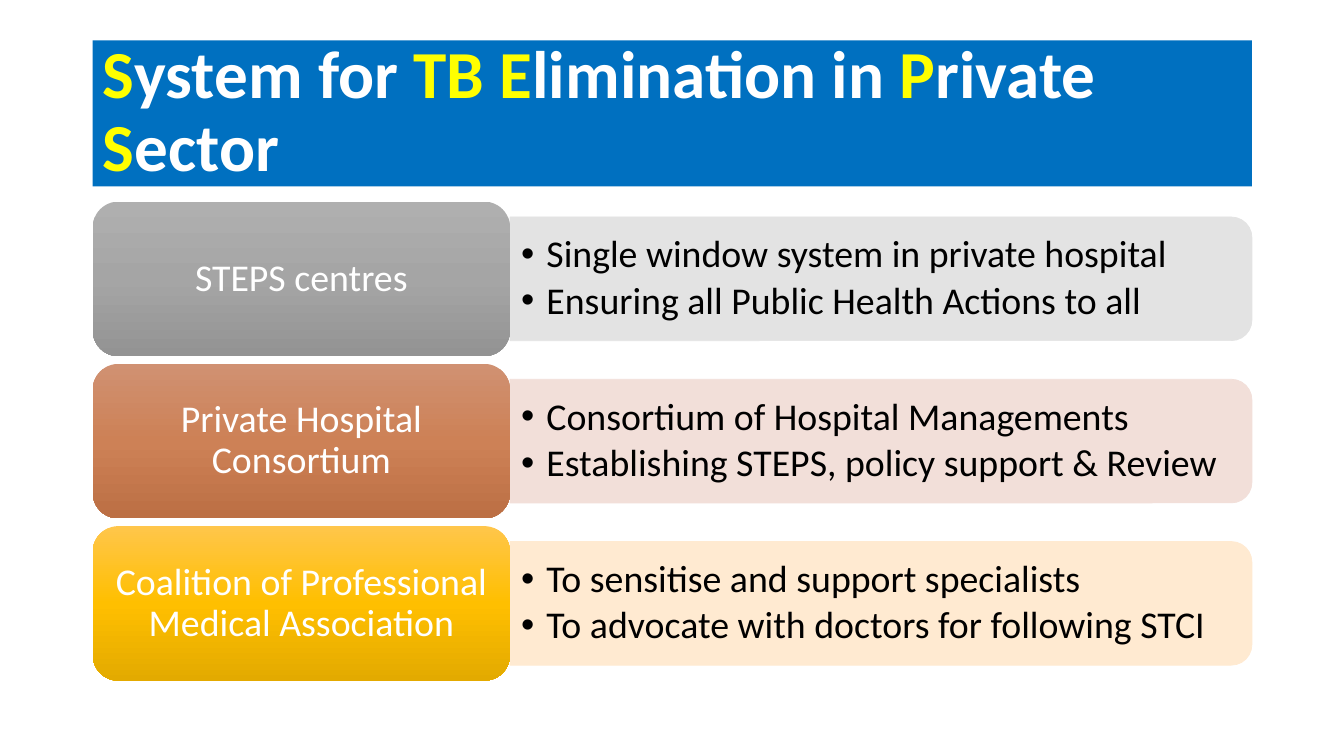
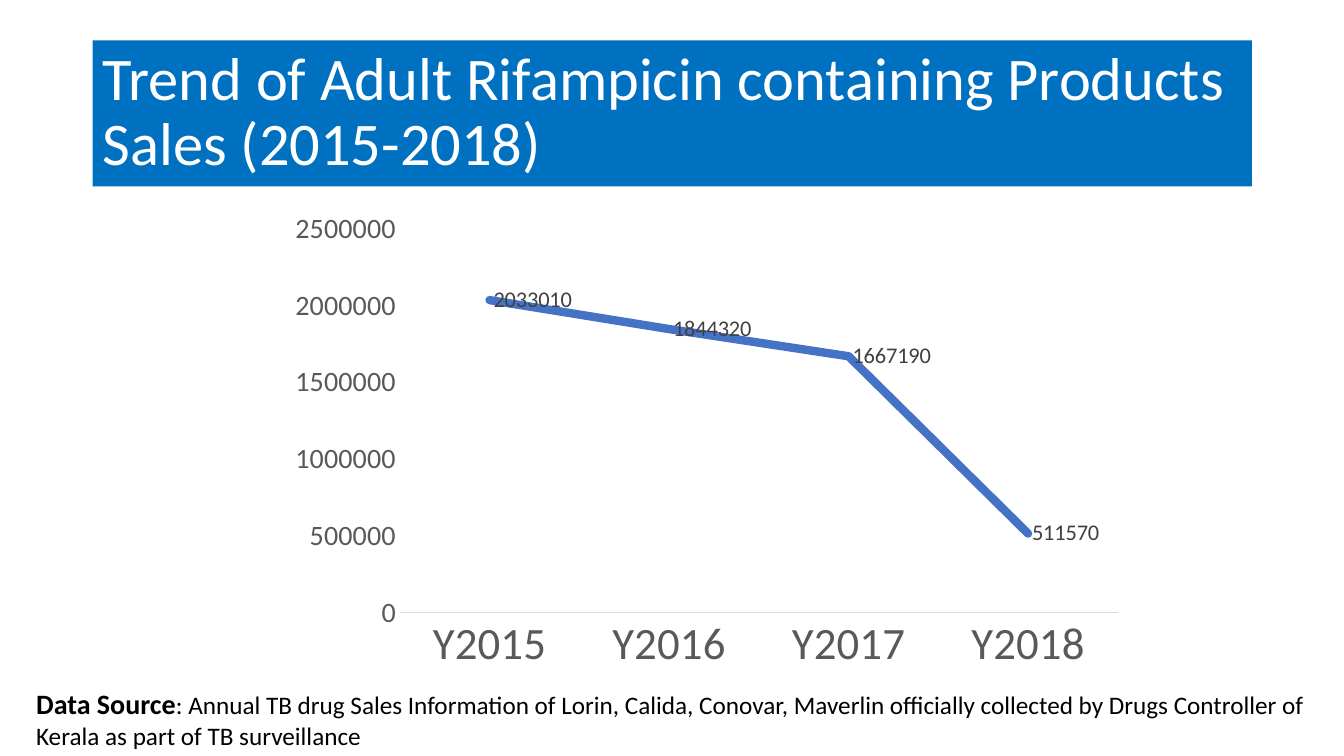
from copy import deepcopy
from pptx import Presentation
from pptx.chart.data import CategoryChartData
from pptx.dml.color import RGBColor
from pptx.enum.chart import XL_CHART_TYPE as ChartType
from pptx.enum.chart import XL_LABEL_POSITION as LabelSpot
from pptx.enum.chart import XL_MARKER_STYLE as Marker
from pptx.enum.chart import XL_TICK_MARK as Tick
from pptx.enum.shapes import MSO_SHAPE as Shape
from pptx.enum.text import MSO_ANCHOR as Anchor
from pptx.enum.text import MSO_AUTO_SIZE as AutoSize
from pptx.enum.text import PP_ALIGN as Align
from pptx.oxml.ns import qn
from pptx.oxml.xmlchemy import OxmlElement
from pptx.util import Pt

FONT = "Calibri"
BLUE, YELLOW, WHITE, BLACK = "0070C0", "FFFF00", "FFFFFF", "000000"
AXIS_GREY, LABEL_GREY, RULE_GREY, SERIES_BLUE = "595959", "404040", "D9D9D9", "4472C4"
COMPARISON, TITLE_ONLY = 4, 5

TITLE_BOX = (66.24, 28.8, 828, 104.4)
ROWS_BOX = (66.24, 144, 828, 342.2)
CHART_BOX = (198.72, 144, 612, 342.72)
SOURCE_BOX = (18.72, 486.72, 927.36, 53.28)

ROWS = [
    ("STEPS centres",
     ["Single window system in private hospital", "Ensuring all Public Health Actions to all"],
     ["AFAFAF", "A5A5A5", "939393"], "E3E3E3"),
    ("Private Hospital Consortium",
     ["Consortium of Hospital Managements", "Establishing STEPS, policy support & Review"],
     ["D09172", "CD8156", "BC6F44"], "F2DFD9"),
    ("Coalition of Professional Medical Association",
     ["To sensitise and support specialists", "To advocate with doctors for following STCI"],
     ["FFC64B", "FFBF00", "E3AA00"], "FFEAD1"),
]
SALES = {"Y2015": 2033010, "Y2016": 1844320, "Y2017": 1667190, "Y2018": 511570}


def rgb(value):
    """Turn a hex string into a colour."""
    return RGBColor.from_string(value)


def apply(target, formats):
    """Set each attribute of the target from a dict."""
    for name, value in formats.items():
        setattr(target, name, value)


def place(item, box):
    """Move and size an item to a box given in points."""
    apply(item, dict(zip(("left", "top", "width", "height"), map(Pt, box))))


def style_font(font, size, color, bold=False):
    """Give a font its face, size, colour and weight."""
    apply(font, {"name": FONT, "size": Pt(size), "bold": bold})
    font.color.rgb = rgb(color)


def write(para, spans, **formats):
    """Fill a paragraph with (text, size, colour, bold) spans."""
    apply(para, formats)
    for text, *style in spans:
        span = para.add_run()
        span.text = text
        style_font(span.font, *style)


def set_frame(frame, side=7.2, edge=3.6, anchor=Anchor.MIDDLE):
    """Set wrapping, anchor and insets of a text frame."""
    apply(frame, {"word_wrap": True, "auto_size": AutoSize.NONE, "vertical_anchor": anchor,
                  "margin_left": Pt(side), "margin_right": Pt(side),
                  "margin_top": Pt(edge), "margin_bottom": Pt(edge)})


def add_title(page, spans):
    """Fill the title placeholder as a blue band."""
    title = page.shapes.title
    place(title, TITLE_BOX)
    title.fill.solid()
    title.fill.fore_color.rgb = rgb(BLUE)
    set_frame(title.text_frame)
    write(title.text_frame.paragraphs[0], spans, alignment=Align.LEFT, line_spacing=0.9)


def add_bullet(para):
    """Give a paragraph a hanging bullet."""
    props = para._p.get_or_add_pPr()
    props.set("marL", str(Pt(18)))
    props.set("indent", str(-Pt(18)))
    bullet = OxmlElement("a:buChar")
    bullet.set("char", "•")
    props.append(bullet)


def fill_gradient(shape, colors):
    """Fill a shape from top to bottom with evenly spaced colours."""
    shape.fill.gradient()
    shape.fill.gradient_angle = 270
    stop_list = shape._element.spPr.find(qn("a:gradFill")).find(qn("a:gsLst"))
    while len(stop_list) < len(colors):
        stop_list.append(deepcopy(stop_list[0]))
    for index, (stop, color) in enumerate(zip(shape.fill.gradient_stops, colors)):
        stop.position = index / (len(colors) - 1)
        stop.color.rgb = rgb(color)


def add_row(page, box, holder, label, points, gradient, tint):
    """Draw a label block with a tinted list panel on its right."""
    left, top, width, height = box
    label_width, panel_height = width * 0.36, height * 0.8
    panel_left, panel_width = left + label_width, width - label_width
    panel_top = top + (height - panel_height) / 2

    panel = page.shapes.add_shape(Shape.ROUND_2_SAME_RECTANGLE, 0, 0, 0, 0)
    place(panel, (panel_left + (panel_width - panel_height) / 2,
                  top + (height - panel_width) / 2, panel_height, panel_width))
    panel.rotation = 90
    panel.shadow.inherit = False
    panel.fill.solid()
    panel.fill.fore_color.rgb = panel.line.color.rgb = rgb(tint)
    panel.line.width = Pt(0.5)

    panel._element.addnext(holder._element)
    place(holder, (panel_left, panel_top, panel_width - 4, panel_height))
    frame = holder.text_frame
    set_frame(frame, 8, 4)
    for index, point in enumerate(points):
        para = frame.add_paragraph() if index else frame.paragraphs[0]
        write(para, [(point, 27, BLACK)], alignment=Align.LEFT, line_spacing=0.9,
              space_before=Pt(0), space_after=Pt(4))
        add_bullet(para)

    block = page.shapes.add_shape(Shape.ROUNDED_RECTANGLE, 0, 0, 0, 0)
    place(block, (left, top, label_width, height))
    block.shadow.inherit = False
    block.line.fill.background()
    fill_gradient(block, gradient)
    set_frame(block.text_frame, 8, 4)
    write(block.text_frame.paragraphs[0], [(label, 27, WHITE)],
          alignment=Align.CENTER, line_spacing=0.9)


def add_rows(page, box, rows, gap=5.5):
    """Stack the rows in a box, one body placeholder each."""
    left, top, width, height = box
    row_height = (height - gap * (len(rows) - 1)) / len(rows)
    holders = [item for item in page.placeholders if item.placeholder_format.idx > 0]
    for index, (holder, row) in enumerate(zip(holders, rows)):
        row_top = top + index * (row_height + gap)
        add_row(page, (left, row_top, width, row_height), holder, *row)
    for spare in holders[len(rows):]:
        spare._element.getparent().remove(spare._element)


def add_sales_chart(page, box, sales):
    """Draw the sales line chart in a box."""
    data = CategoryChartData()
    data.categories = list(sales)
    data.add_series("Series 1", list(sales.values()))
    chart = page.shapes.add_chart(ChartType.LINE, *map(Pt, box), data).chart
    apply(chart, {"has_legend": False, "has_title": False})
    style_font(chart.font, 10, BLACK)

    for axis, size in ((chart.category_axis, 32), (chart.value_axis, 20)):
        apply(axis, {"has_major_gridlines": False, "major_tick_mark": Tick.NONE,
                     "minor_tick_mark": Tick.NONE})
        style_font(axis.tick_labels.font, size, AXIS_GREY)
    chart.category_axis.format.line.color.rgb = rgb(RULE_GREY)
    chart.category_axis.format.line.width = Pt(0.75)
    chart.value_axis.format.line.fill.background()
    apply(chart.value_axis, {"minimum_scale": 0, "maximum_scale": 2500000, "major_unit": 500000})

    plot = chart.plots[0]
    plot.vary_by_categories = False
    series = plot.series[0]
    series.smooth = False
    series.marker.style = Marker.NONE
    line = series.format.line
    line.color.rgb = rgb(SERIES_BLUE)
    line.width = Pt(6)
    stroke = line._get_or_add_ln()
    stroke.set("cap", "rnd")
    stroke.append(OxmlElement("a:round"))
    labels = series.data_labels
    apply(labels, {"show_value": True, "position": LabelSpot.RIGHT})
    style_font(labels.font, 16, LABEL_GREY)


def add_source(page, box, heading, text):
    """Write the data source note in a box."""
    note = page.shapes.add_textbox(*map(Pt, box))
    set_frame(note.text_frame, anchor=Anchor.TOP)
    write(note.text_frame.paragraphs[0], [(heading, 20, BLACK, True), (text, 18, BLACK)])


def build_system_page(deck):
    """Build the slide on the parts of the system."""
    page = deck.slides.add_slide(deck.slide_layouts[COMPARISON])
    words = [("S", YELLOW), ("ystem for ", WHITE), ("TB E", YELLOW), ("limination in ", WHITE),
             ("P", YELLOW), ("rivate ", WHITE), ("S", YELLOW), ("ector", WHITE)]
    add_title(page, [(text, 48, color, True) for text, color in words])
    add_rows(page, ROWS_BOX, ROWS)


def build_sales_page(deck):
    """Build the slide on the sales trend."""
    page = deck.slides.add_slide(deck.slide_layouts[TITLE_ONLY])
    add_title(page, [("Trend of Adult Rifampicin containing Products Sales (2015-2018)",
                      43.2, WHITE)])
    add_sales_chart(page, CHART_BOX, SALES)
    add_source(page, SOURCE_BOX, "Data Source",
               ": Annual TB drug Sales Information of Lorin, Calida, Conovar, Maverlin "
               "officially collected by Drugs Controller of Kerala as part of TB surveillance")


def main():
    """Build and save the deck."""
    deck = Presentation()
    apply(deck, {"slide_width": Pt(960), "slide_height": Pt(540)})
    build_system_page(deck)
    build_sales_page(deck)
    deck.save("out.pptx")


if __name__ == "__main__":
    main()
